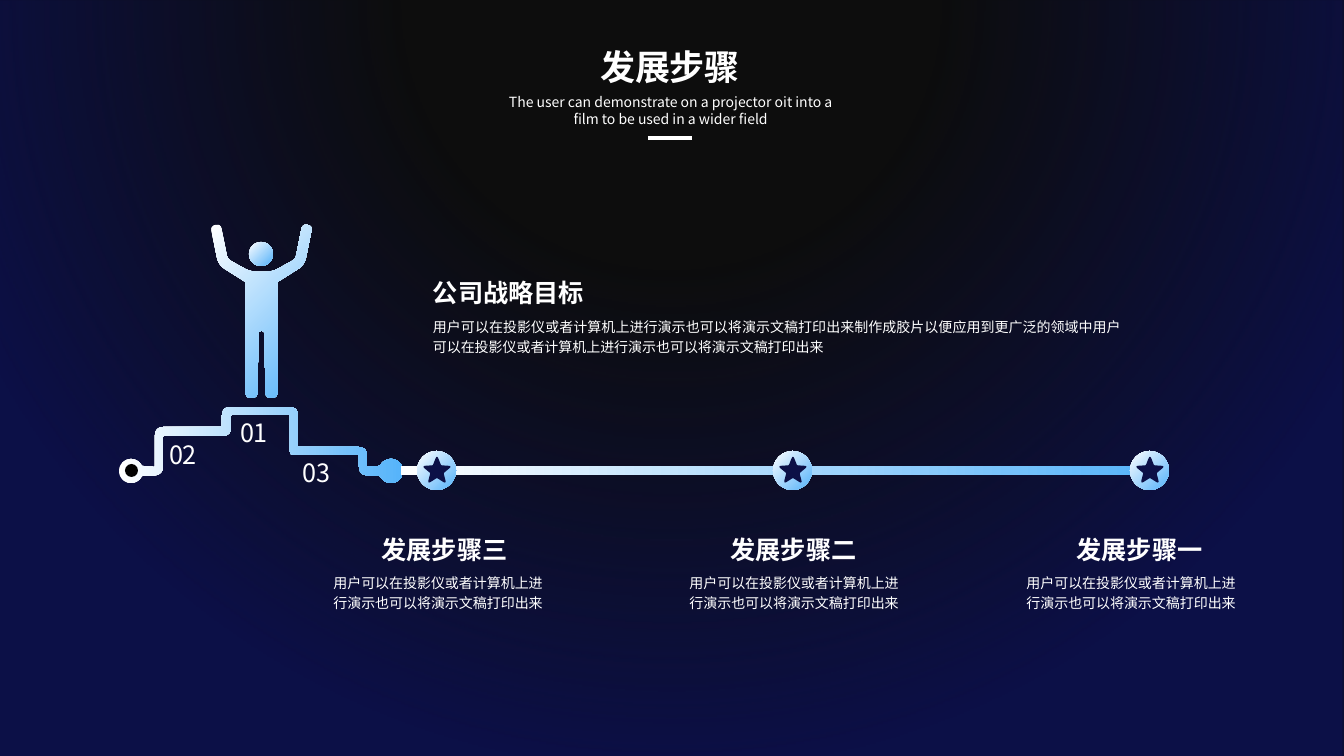
from dataclasses import dataclass
from itertools import chain
from math import cos, hypot, radians, sin

from lxml.etree import SubElement
from pptx import Presentation
from pptx.dml.color import RGBColor
from pptx.enum.shapes import MSO_CONNECTOR, MSO_SHAPE
from pptx.enum.text import MSO_AUTO_SIZE, PP_ALIGN
from pptx.oxml import parse_xml
from pptx.oxml.ns import nsdecls, qn
from pptx.util import Pt

PX = 12192000 / 1344


@dataclass(frozen=True)
class Theme:
    """Colours, type sizes and font of the slide."""
    white: str = "FFFFFF"
    sky: str = "55B3FA"
    navy: str = "0C1047"
    night: str = "0D0D0D"
    black: str = "000000"
    font: str = "Noto Sans CJK SC"
    title: int = 25
    heading: int = 18
    body: int = 10


@dataclass(frozen=True)
class Box:
    """A rectangle in px."""
    left: int
    top: int
    width: int
    height: int

    def inner(self, left, top, width, height):
        """Return a box placed relative to this one."""
        return Box(self.left + left, self.top + top, width, height)

    def emu(self):
        """Return the rectangle in EMU."""
        return [round(v * PX) for v in (self.left, self.top, self.width, self.height)]


THEME = Theme()
GOAL = "用户可以在投影仪或者计算机上进行演示也可以将演示文稿打印出来"
GOAL_LONG = GOAL + "制作成胶片以便应用到更广泛的领域中" + GOAL
STEPS = [("发展步骤三", 321, 323), ("发展步骤二", 670, 679), ("发展步骤一", 1016, 1016)]


def paint(shape, color=None, angle=0):
    """Fill with one colour, or with the white to sky gradient."""
    shape.shadow.inherit = False
    shape.line.fill.background()
    if color:
        shape.fill.solid()
        shape.fill.fore_color.rgb = RGBColor.from_string(color)
        return
    shape.fill.gradient()
    shape.fill.gradient_angle = -angle % 360
    for stop, position, tone in zip(shape.fill.gradient_stops, (0, 1), (THEME.white, THEME.sky)):
        stop.position = position
        stop.color.rgb = RGBColor.from_string(tone)


def add_preset(slide, kind, box, color=None, angle=0):
    """Place a painted preset shape."""
    shape = slide.shapes.add_shape(kind, *box.emu())
    paint(shape, color, angle)
    return shape


def round_corners(corners):
    """Turn (x, y, radius) corners into the points of a rounded outline."""
    points = []
    for i, (x, y, radius) in enumerate(corners):
        if not radius:
            points.append((x, y))
            continue
        ends = []
        for nx, ny, _ in (corners[i - 1], corners[(i + 1) % len(corners)]):
            share = radius / hypot(nx - x, ny - y)
            ends.append((x + (nx - x) * share, y + (ny - y) * share))
        (ax, ay), (bx, by) = ends
        for t in (k / 8 for k in range(9)):
            a, c, b = (1 - t) ** 2, 2 * t * (1 - t), t * t
            points.append((a * ax + c * x + b * bx, a * ay + c * y + b * by))
    return points


def add_outline(slide, box, corners, color=None, angle=0):
    """Draw a rounded outline whose corners are relative to the box."""
    points = [((box.left + x) * PX, (box.top + y) * PX) for x, y in round_corners(corners)]
    builder = slide.shapes.build_freeform(*points[0], scale=1.0)
    builder.add_line_segments(points[1:], close=True)
    paint(builder.convert_to_shape(), color, angle)


def add_text(slide, box, text, size, align=PP_ALIGN.CENTER, bold=False, spacing=None, tight=False):
    """Place one run of white text."""
    frame = slide.shapes.add_textbox(*box.emu()).text_frame
    frame.word_wrap = not tight
    if tight:
        frame.margin_left = frame.margin_right = frame.margin_top = frame.margin_bottom = 0
    else:
        frame.auto_size = MSO_AUTO_SIZE.SHAPE_TO_FIT_TEXT
    paragraph = frame.paragraphs[0]
    paragraph.alignment = align
    if spacing:
        paragraph.line_spacing = spacing
    run = paragraph.add_run()
    run.text = text
    run.font.size = Pt(size)
    run.font.bold = bold
    run.font.color.rgb = RGBColor.from_string(THEME.white)
    run.font.name = THEME.font
    SubElement(run.font._element, qn("a:ea"), typeface=THEME.font)


def draw_backdrop(slide, box):
    """Lay a navy glow that clears towards the top over the night background."""
    slide.background.fill.solid()
    slide.background.fill.fore_color.rgb = RGBColor.from_string(THEME.night)
    glow = add_preset(slide, MSO_SHAPE.RECTANGLE, box, THEME.navy)
    clear = f'<a:srgbClr val="{THEME.navy}"><a:alpha val="0"/></a:srgbClr>'
    gradient = parse_xml(
        f'<a:gradFill {nsdecls("a")} rotWithShape="1"><a:gsLst>'
        f'<a:gs pos="0">{clear}</a:gs><a:gs pos="35000">{clear}</a:gs>'
        f'<a:gs pos="100000"><a:srgbClr val="{THEME.navy}"/></a:gs></a:gsLst>'
        '<a:path path="circle"><a:fillToRect l="50000" t="-80000" r="50000" b="180000"/>'
        '</a:path></a:gradFill>')
    solid = glow._element.spPr.find(qn("a:solidFill"))
    solid.getparent().replace(solid, gradient)


def draw_header(slide, box):
    """Write the title, its subtitle and the short rule."""
    add_text(slide, box.inner(40, 0, 290, 52), "发展步骤", THEME.title, bold=True)
    add_text(slide, box.inner(0, 48, 371, 44),
             "The user can demonstrate on a projector oit into a film to be used in a wider field",
             THEME.body)
    left, top, width, _ = box.inner(163, 97, 44, 0).emu()
    rule = slide.shapes.add_connector(MSO_CONNECTOR.STRAIGHT, left, top, left + width, top)
    rule.line.color.rgb = RGBColor.from_string(THEME.white)
    rule.line.width = Pt(2.25)
    SubElement(rule._element.spPr, qn("a:effectLst"))


def bulb(x, y, start):
    """Return the corners of a round end that opens at the start angle."""
    angles = [radians(start + step) for step in range(0, 311, 10)]
    return [(x + 12 * cos(a), y + 12 * sin(a), 0) for a in angles]


def draw_podium(slide, box):
    """Draw the stepped band with its three numbers."""
    upper = [(36, 60, 1), (36, 20, 9), (103, 20, 1), (103, 0, 9), (179, 0, 9),
             (179, 40, 1), (248, 40, 9), (248, 60, 1)]
    lower = [(240, 68, 9), (240, 48, 1), (171, 48, 4), (171, 8, 1), (112, 8, 1),
             (112, 29, 9), (44, 29, 1), (44, 68, 9)]
    add_outline(slide, box, bulb(12, 64, 25) + upper + bulb(272, 64, 205) + lower)
    add_preset(slide, MSO_SHAPE.OVAL, box.inner(6, 57, 13, 13), THEME.black)
    for number, left, top in (("01", 121, 10), ("02", 50, 32), ("03", 184, 50)):
        add_text(slide, box.inner(left, top, 83, 64), number, THEME.heading,
                 PP_ALIGN.LEFT, tight=True)


def draw_winner(slide, box):
    """Draw the figure with raised arms, mirrored about its middle."""
    half = [(11, 48, 8), (34, 35, 4), (41, 0, 5), (51, 2, 5), (43, 41, 8),
            (16, 58, 0), (16, 174, 6), (4, 174, 6), (3, 107, 3)]
    middle = box.width / 2
    right = [(middle + x, y, r) for x, y, r in half]
    left = [(middle - x, y, r) for x, y, r in reversed(half)]
    add_outline(slide, box, right + left, angle=45)
    add_preset(slide, MSO_SHAPE.OVAL, box.inner(38, 18, 24, 24), angle=45)


def draw_timeline(slide, box):
    """Draw the bar and its evenly spaced star badges."""
    add_preset(slide, MSO_SHAPE.RECTANGLE, box.inner(0, 15, 761, 9))
    tips = [radians(72 * k - 90) for k in range(5)]
    star = list(chain.from_iterable(
        ((20 + 16 * cos(a), 20 + 16 * sin(a), 4),
         (20 + 7 * cos(a + radians(36)), 20 + 7 * sin(a + radians(36)), 1)) for a in tips))
    for step in range(len(STEPS)):
        badge = box.inner(16 + step * 713 // 2, 0, 39, 39)
        add_preset(slide, MSO_SHAPE.OVAL, badge, angle=45)
        add_outline(slide, badge, star, THEME.navy)


def draw_goal(slide, box):
    """Write the strategic goal and its description."""
    add_text(slide, box.inner(0, 0, 247, 43), "公司战略目标", THEME.heading,
             PP_ALIGN.JUSTIFY, True, 1.2)
    add_text(slide, box.inner(0, 44, box.width, 50), GOAL_LONG, THEME.body,
             PP_ALIGN.JUSTIFY, spacing=1.2)


def draw_steps(slide, box):
    """Write the heading and description under each badge."""
    for heading, heading_left, body_left in STEPS:
        add_text(slide, box.inner(heading_left, 0, 247, 43), heading, THEME.heading,
                 bold=True, spacing=1.2)
        add_text(slide, box.inner(body_left, 43, 230, 72), GOAL, THEME.body, spacing=1.2)


def main():
    """Build the slide and save it."""
    deck = Presentation()
    deck.slide_width, deck.slide_height = Box(0, 0, 1344, 756).emu()[2:]
    slide = deck.slides.add_slide(deck.slide_layouts[6])
    draw_backdrop(slide, Box(0, 0, 1344, 756))
    draw_podium(slide, Box(119, 407, 284, 76))
    draw_winner(slide, Box(211, 224, 101, 174))
    draw_timeline(slide, Box(401, 451, 769, 39))
    draw_goal(slide, Box(423, 266, 708, 94))
    draw_steps(slide, Box(0, 523, 1344, 115))
    draw_header(slide, Box(485, 41, 371, 98))
    deck.save("out.pptx")


if __name__ == "__main__":
    main()
